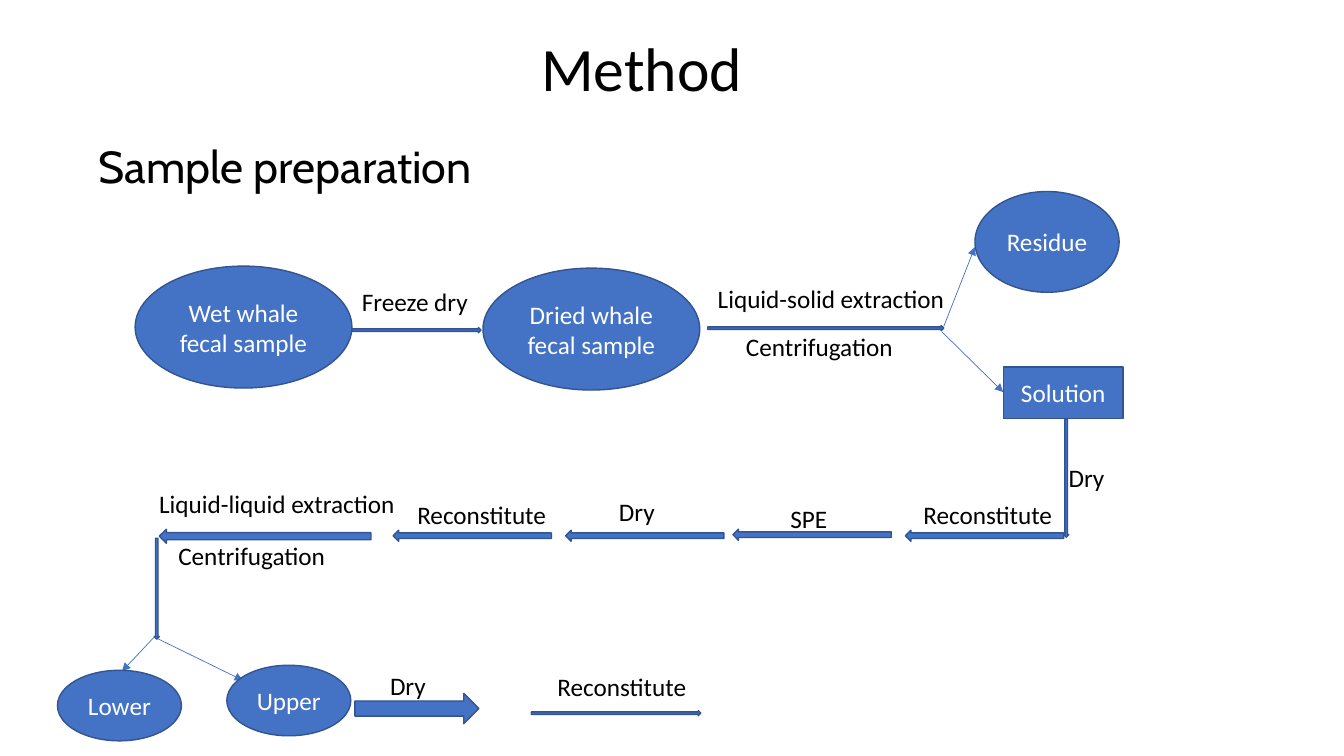
from typing import NamedTuple

from lxml import etree
from pptx import Presentation
from pptx.dml.color import RGBColor
from pptx.enum.shapes import MSO_CONNECTOR, MSO_SHAPE
from pptx.enum.text import MSO_ANCHOR, PP_ALIGN
from pptx.oxml.ns import qn
from pptx.util import Inches, Pt

BLUE = RGBColor(0x44, 0x72, 0xC4)
DARK_BLUE = RGBColor(0x32, 0x54, 0x91)
WHITE = RGBColor(0xFF, 0xFF, 0xFF)
BLACK = RGBColor(0, 0, 0)

OVAL = MSO_SHAPE.OVAL
RECT = MSO_SHAPE.RECTANGLE
RIGHT = MSO_SHAPE.RIGHT_ARROW
LEFT = MSO_SHAPE.LEFT_ARROW
DOWN = MSO_SHAPE.DOWN_ARROW
STRAIGHT = MSO_CONNECTOR.STRAIGHT
MIDDLE = MSO_ANCHOR.MIDDLE
CENTER = PP_ALIGN.CENTER


class Block(NamedTuple):
    kind: MSO_SHAPE
    x: float
    y: float
    w: float
    h: float
    text: str = ""


class Label(NamedTuple):
    text: str
    x: float
    y: float
    w: float
    h: float = 0.4
    size: int = 18
    font: str = "Calibri"


class Branch(NamedTuple):
    x1: float
    y1: float
    x2: float
    y2: float


BRANCHES = [
    Branch(9.36, 3.24, 9.67, 2.45),
    Branch(9.34, 3.29, 9.95, 3.89),
    Branch(1.53, 6.32, 1.21, 6.66),
    Branch(1.53, 6.32, 2.41, 6.75),
]

BLOCKS = [
    Block(OVAL, 1.34, 2.64, 2.15, 1.21, "Wet whale fecal sample"),
    Block(RIGHT, 3.49, 3.25, 1.28, 0.05),
    Block(OVAL, 4.79, 2.66, 2.15, 1.21, "Dried whale fecal sample"),
    Block(RIGHT, 7.02, 3.23, 2.34, 0.05),
    Block(OVAL, 9.67, 1.9, 1.43, 1, "Residue"),
    Block(RECT, 9.95, 3.64, 1.19, 0.51, "Solution"),
    Block(DOWN, 10.55, 4.16, 0.05, 1.17),
    Block(LEFT, 8.98, 5.26, 1.57, 0.11),
    Block(LEFT, 7.27, 5.25, 1.57, 0.11),
    Block(LEFT, 5.61, 5.26, 1.57, 0.11),
    Block(LEFT, 3.9, 5.26, 1.57, 0.11),
    Block(LEFT, 1.58, 5.25, 2.1, 0.14),
    Block(DOWN, 1.53, 5.34, 0.05, 1),
    Block(OVAL, 2.25, 6.6, 1.23, 0.7, "Upper"),
    Block(OVAL, 0.57, 6.65, 1.23, 0.7, "Lower"),
    Block(RIGHT, 3.52, 6.88, 1.23, 0.3),
    Block(RIGHT, 5.27, 7.05, 1.68, 0.05),
]

LABELS = [
    Label("Method", 5.27, 0.24, 2.47, 0.84, 44),
    Label("Sample preparation", 0.88, 1.03, 4.55, 1.22, 32, "Cabin"),
    Label("Freeze dry", 3.49, 2.79, 1.27),
    Label("Liquid-solid extraction", 7.02, 2.76, 2.47),
    Label("Centrifugation", 7.3, 3.24, 1.68),
    Label("Dry", 10.5, 4.54, 0.64),
    Label("Reconstitute", 9.06, 4.9, 1.49),
    Label("SPE", 7.74, 4.94, 0.64),
    Label("Dry", 6.04, 4.87, 0.64),
    Label("Reconstitute", 4.04, 4.9, 1.49),
    Label("Liquid-liquid extraction", 1.48, 4.79, 2.56),
    Label("Centrifugation", 1.67, 5.31, 1.68),
    Label("Dry", 3.77, 6.6, 0.64),
    Label("Reconstitute", 5.43, 6.61, 1.49),
]


def write_text(shape, text: str, size: int, font: str, color: RGBColor):
    tf = shape.text_frame
    tf.word_wrap = True
    tf.vertical_anchor = MIDDLE
    p = tf.paragraphs[0]
    p.text = text
    p.font.size = Pt(size)
    p.font.name = font
    p.font.color.rgb = color
    return p


def add_block(s, block: Block) -> None:
    sp = s.shapes.add_shape(block.kind, *map(Inches, block[1:5]))
    sp.shadow.inherit = False
    sp.fill.solid()
    sp.fill.fore_color.rgb = BLUE
    sp.line.color.rgb = DARK_BLUE
    sp.line.width = Pt(1)
    if block.text:
        p = write_text(sp, block.text, 18, "Calibri", WHITE)
        p.alignment = CENTER


def add_label(s, label: Label) -> None:
    sp = s.shapes.add_textbox(*map(Inches, label[1:5]))
    write_text(sp, label.text, label.size, label.font, BLACK)


def add_branch(s, branch: Branch) -> None:
    """Draw a thin line with an arrowhead at its end."""
    line = s.shapes.add_connector(STRAIGHT, *map(Inches, branch))
    line.line.color.rgb = BLUE
    line.line.width = Pt(0.5)
    etree.SubElement(line.line._get_or_add_ln(), qn("a:tailEnd"), type="triangle")
    etree.SubElement(line._element.spPr, qn("a:effectLst"))


def main() -> None:
    prs = Presentation()
    prs.slide_width = Inches(13.33)
    prs.slide_height = Inches(7.5)
    s = prs.slides.add_slide(prs.slide_layouts[6])
    for branch in BRANCHES:
        add_branch(s, branch)
    for block in BLOCKS:
        add_block(s, block)
    for label in LABELS:
        add_label(s, label)
    prs.save("out.pptx")


if __name__ == "__main__":
    main()
